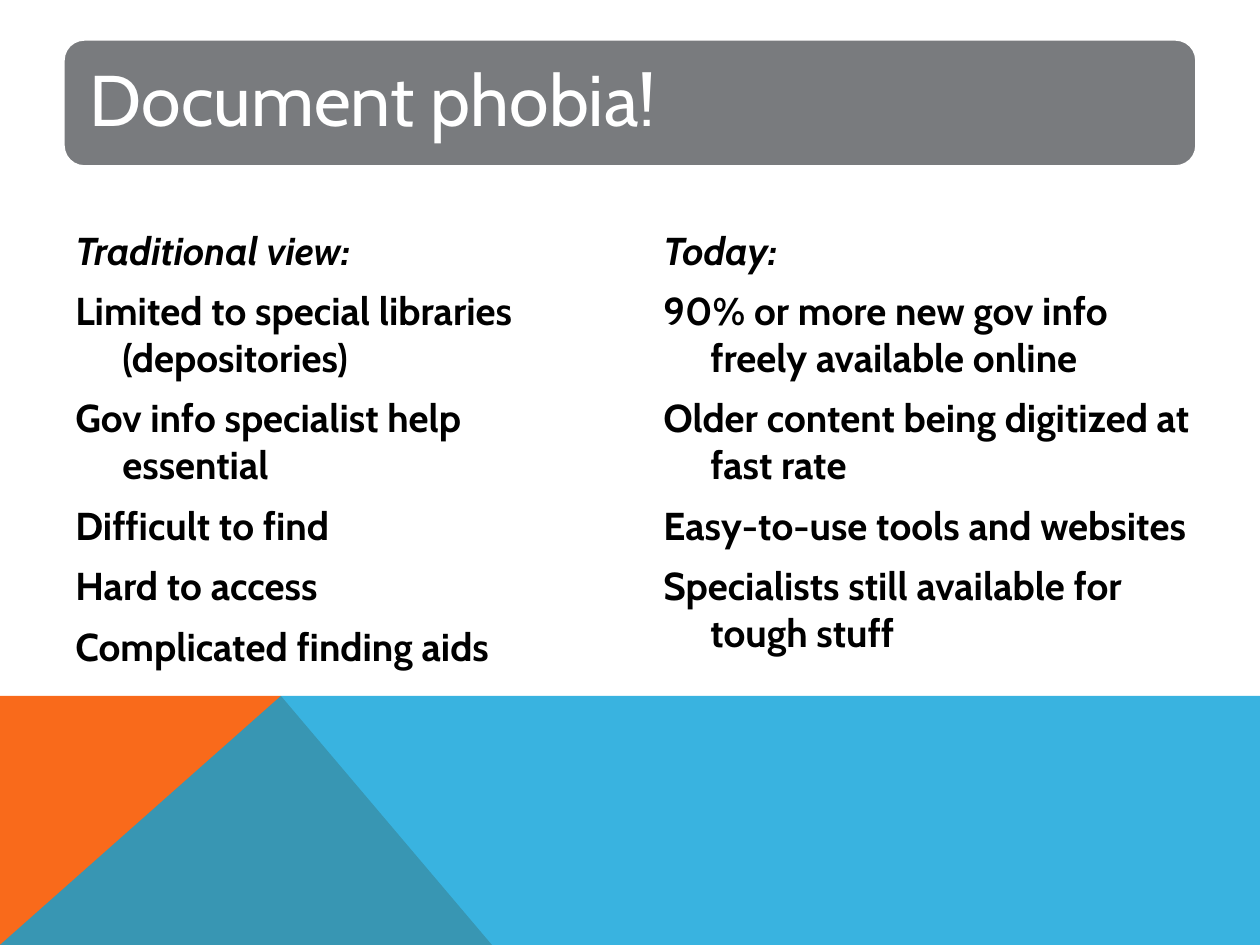
"""Build the document phobia slide: title bar, two text columns, coloured footer."""
from lxml.etree import SubElement
from pptx import Presentation
from pptx.dml.color import RGBColor
from pptx.enum.shapes import MSO_SHAPE as Shape
from pptx.enum.text import MSO_ANCHOR as Anchor
from pptx.oxml.ns import qn
from pptx.util import Pt

PX = 914400 / 126


def px(*vals):
    return [round(v * PX) for v in vals]


def paint(part, tone):
    part.solid()
    part.fore_color.rgb = RGBColor.from_string(tone)


deck = Presentation()
deck.slide_width, deck.slide_height = px(1260, 945)
slide = deck.slides.add_slide(deck.slide_layouts[6])
shapes = slide.shapes

wedges = [
    ("F96A1B", 100, [(0, 945), (0, 696), (281, 696), (492, 945)]),
    ("08A1D9", 80, [(0, 945), (281, 696), (1260, 696), (1260, 945)]),
]
for tone, alpha, pts in wedges:
    pen = shapes.build_freeform(*pts[0], scale=PX)
    pen.add_line_segments(pts[1:], close=True)
    wedge = pen.convert_to_shape()
    wedge.shadow.inherit = False
    paint(wedge.fill, tone)
    wedge.line.fill.background()
    if alpha < 100:
        clr = wedge.fill._xPr.find(".//" + qn("a:srgbClr"))
        SubElement(clr, qn("a:alpha"), val=str(alpha * 1000))

bar = shapes.add_shape(Shape.ROUNDED_RECTANGLE, *px(63, 39, 1134, 128))
bar.shadow.inherit = False
paint(bar.fill, "797B7E")
paint(bar.line.fill, "FFFFFF")
bar.line.width = Pt(2)

title = shapes.add_textbox(*px(69, 45, 1122, 116)).text_frame
title.word_wrap = True
title.vertical_anchor = Anchor.MIDDLE
for side in ("left", "right", "top", "bottom"):
    setattr(title, "margin_" + side, px(21)[0])
para = title.paragraphs[0]
para.line_spacing = 0.9
run = para.add_run()
run.text = "Document phobia!"
for key, val in {"name": "Cabin", "size": Pt(41)}.items():
    setattr(run.font, key, val)
paint(run.font.fill, "FFFFFF")

views = [
    (63, [
        "Traditional view:",
        "Limited to special libraries (depositories)",
        "Gov info specialist help essential",
        "Difficult to find",
        "Hard to access",
        "Complicated finding aids",
    ]),
    (651, [
        "Today:",
        "90% or more new gov info freely available online",
        "Older content being digitized at fast rate",
        "Easy-to-use tools and websites",
        "Specialists still available for tough stuff",
    ]),
]
style = {"name": "Cabin", "size": Pt(22.2), "bold": True}
hang = px(47)[0]
for left, lines in views:
    frame = shapes.add_textbox(*px(left, 220, 557, 473)).text_frame
    frame.word_wrap = True
    for i, line in enumerate(lines):
        para = frame.add_paragraph() if i else frame.paragraphs[0]
        para.space_before = Pt(8)
        if i:
            props = para._p.get_or_add_pPr()
            props.set("marL", str(hang))
            props.set("indent", str(-hang))
        run = para.add_run()
        run.text = line
        for key, val in {**style, "italic": i == 0}.items():
            setattr(run.font, key, val)
        paint(run.font.fill, "000000")

deck.save("out.pptx")
